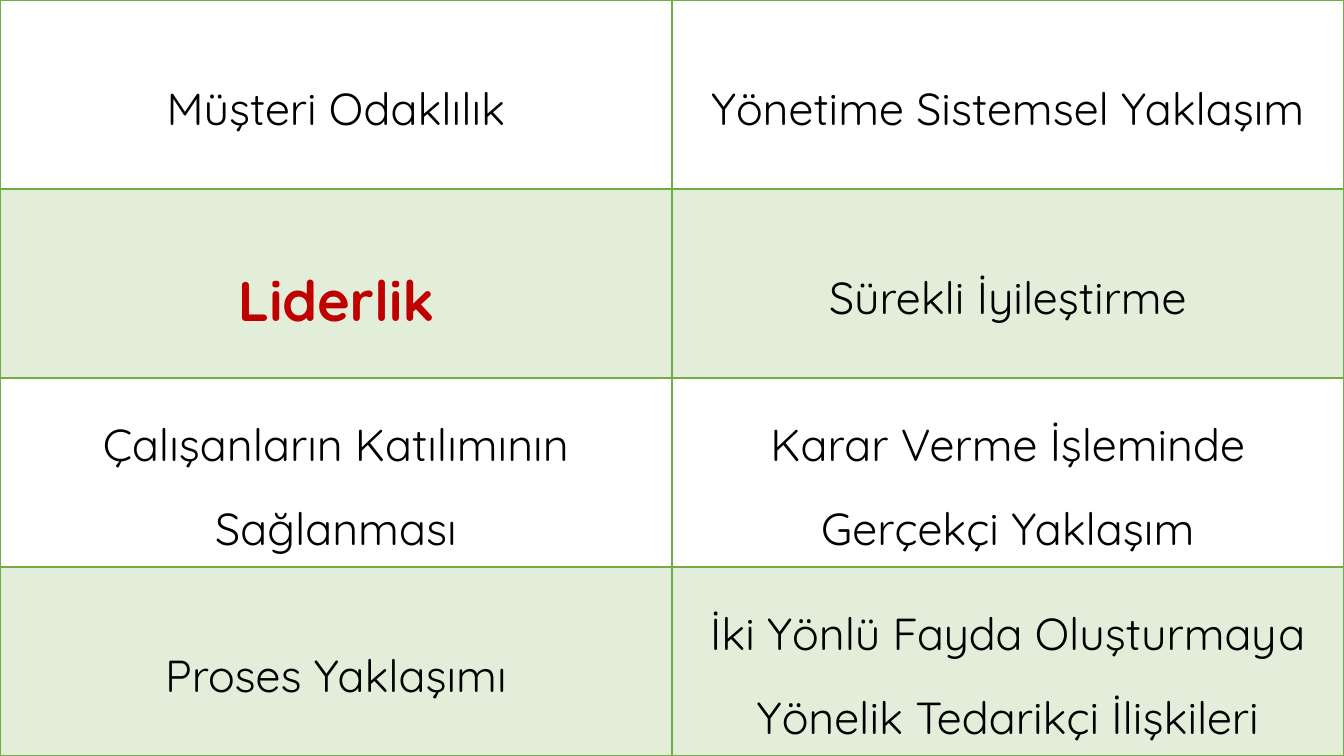
from lxml.etree import SubElement
from pptx import Presentation
from pptx.dml.color import RGBColor
from pptx.enum.text import MSO_ANCHOR as Anchor, PP_ALIGN as Align
from pptx.oxml.ns import qn
from pptx.util import Cm, Pt

WIDTH, HEIGHT = 33.87, 19.05
PRINCIPLES = [
    ("Müşteri Odaklılık", "Yönetime Sistemsel Yaklaşım"),
    ("Liderlik", "Sürekli İyileştirme"),
    ("Çalışanların Katılımının Sağlanması", "Karar Verme İşleminde Gerçekçi Yaklaşım"),
    ("Proses Yaklaşımı", "İki Yönlü Fayda Oluşturmaya Yönelik Tedarikçi İlişkileri"),
]
HIGHLIGHT = "Liderlik"


def color(value):
    return RGBColor.from_string(value)


class SlideBuilder:
    font = "Quicksand"
    ink = "000000"
    accent = "C00000"
    green = "70AD47"
    tint = 20

    def __init__(self, slide):
        self.slide = slide

    def table(self, rows, left, top, width, height):
        frame = self.slide.shapes.add_table(
            len(rows), len(rows[0]), Cm(left), Cm(top), Cm(width), Cm(height)
        )
        table = frame.table
        table.first_row = table.horz_banding = False
        for row_index, row in enumerate(rows):
            for column_index, words in enumerate(row):
                cell = table.cell(row_index, column_index)
                self.borders(cell, bottom=2 if row_index == 0 else 1)
                self.shade(cell, row_index % 2 == 1)
                self.label(cell, words, words == HIGHLIGHT)

    def borders(self, cell, bottom):
        properties = cell._tc.get_or_add_tcPr()
        for side, points in (("L", 1), ("R", 1), ("T", 1), ("B", bottom)):
            line = SubElement(properties, qn(f"a:ln{side}"), w=str(Pt(points)))
            fill = SubElement(line, qn("a:solidFill"))
            SubElement(fill, qn("a:srgbClr"), val=self.green)

    def shade(self, cell, shaded):
        if not shaded:
            cell.fill.background()
            return
        cell.fill.solid()
        cell.fill.fore_color.rgb = color(self.green)
        tone = cell._tc.tcPr.find(qn("a:solidFill")).find(qn("a:srgbClr"))
        SubElement(tone, qn("a:alpha"), val=str(self.tint * 1000))

    def label(self, cell, words, highlighted):
        cell.vertical_anchor = Anchor.MIDDLE
        paragraph = cell.text_frame.paragraphs[0]
        paragraph.alignment = Align.CENTER
        paragraph.line_spacing = 1.5
        run = paragraph.add_run()
        run.text = words
        run.font.name = self.font
        run.font.size = Pt(40 if highlighted else 32)
        run.font.bold = highlighted
        run.font.color.rgb = color(self.accent if highlighted else self.ink)


def main():
    presentation = Presentation()
    presentation.slide_width = Cm(WIDTH)
    presentation.slide_height = Cm(HEIGHT)
    slide = presentation.slides.add_slide(presentation.slide_layouts[6])
    SlideBuilder(slide).table(PRINCIPLES, 0, 0, WIDTH, HEIGHT)
    presentation.save("out.pptx")


if __name__ == "__main__":
    main()
